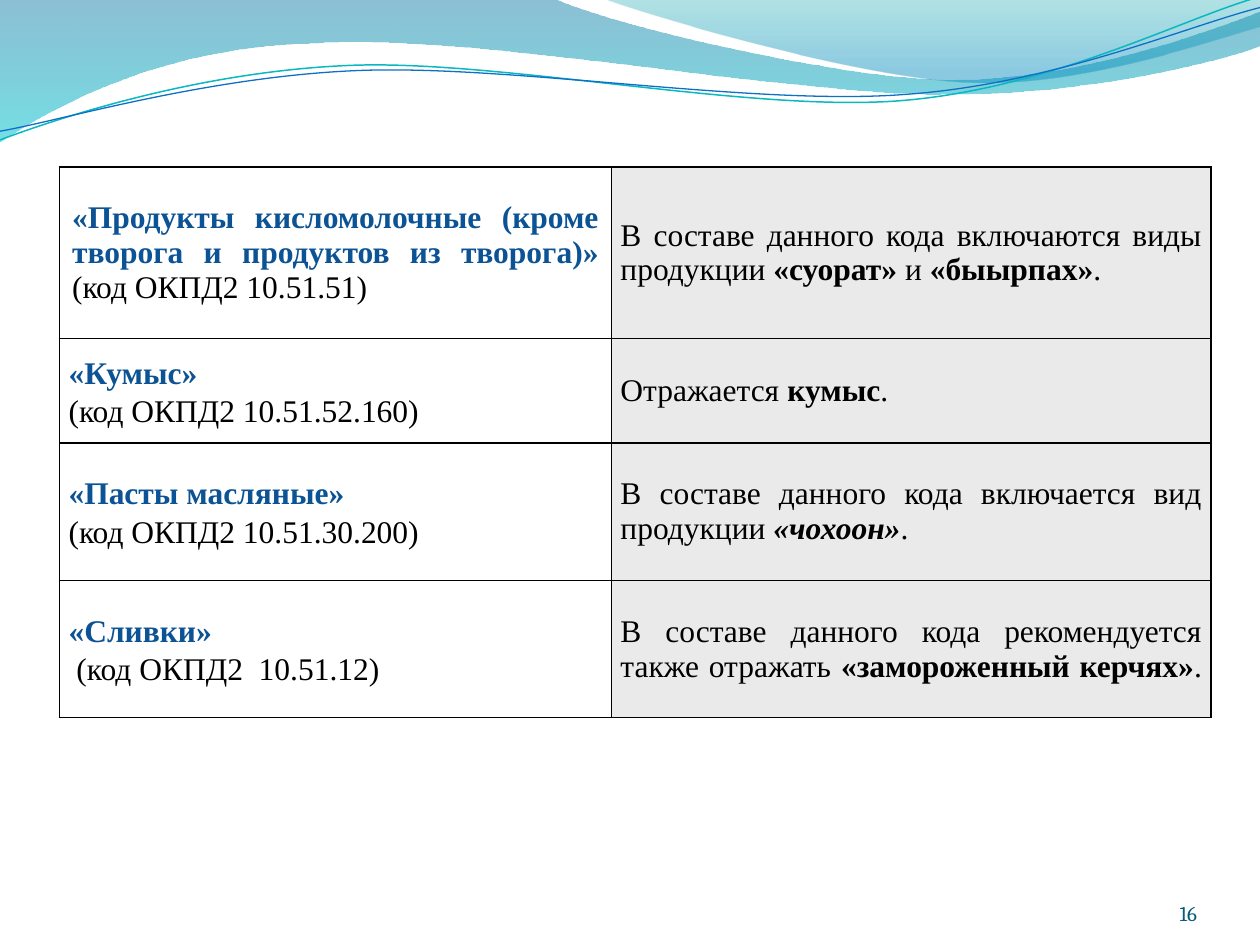
from lxml.etree import SubElement
from pptx import Presentation
from pptx.dml.color import RGBColor
from pptx.enum.text import MSO_ANCHOR, PP_ALIGN
from pptx.oxml.ns import qn
from pptx.util import Pt

COLORS = {
    "black": "000000", "heading": "0B5394", "gray": "EAEAEA", "number": "045D75",
    "deep": "0074A1", "aqua": "00C6CF", "teal": "00A1A9", "sky": "008BBF",
    "teal line": "0AB8BF", "blue line": "0F6FC6",
}


def color(name):
    return RGBColor.from_string(COLORS[name])


def draw_curve(page, start, segments, closed):
    points = [(Pt(segment[i]), Pt(segment[i + 1]))
              for segment in segments for i in range(0, len(segment), 2)]
    builder = page.shapes.build_freeform(Pt(start[0]), Pt(start[1]))
    builder.add_line_segments(points, close=closed)
    shape = builder.convert_to_shape()
    shape.shadow.inherit = False
    lines = iter(shape.element.findall(".//" + qn("a:lnTo")))
    for segment in segments:
        first = next(lines)
        if len(segment) == 6:
            first.tag = qn("a:cubicBezTo")
            for line in (next(lines), next(lines)):
                first.append(line[0])
                line.getparent().remove(line)
    return shape


deck = Presentation()
deck.slide_width, deck.slide_height = Pt(720), Pt(540)
page = deck.slides.add_slide(deck.slide_layouts[6])

waves = [
    ((0, 0),
     [(316.8, -0.7), (342.7, 12.2, 478.1, 45.4, 545.8, 45.4),
      (614.2, 45.4, 689.8, 18.7, 720, 6.5), (720.7, 25.9),
      (707.8, 31.7, 626.4, 54.7, 537.1, 54), (447.8, 54, 275, 20.2, 185, 24.5),
      (92.9, 25.9, 33.1, 59.8, -0.7, 81.4), (0, 0)],
     [(0, "deep", 45), (1, "aqua", 55)]),
    ((344.9, -0.7),
     [(366.5, 7.9, 491, 44.6, 553.7, 46.8), (616.3, 49.7, 691.9, 23, 720, 15.1),
      (720, 0), (344.9, -0.7)],
     [(0, "teal", 30), (0.8, "sky", 45)]),
]
for start, segments, stops in waves:
    wave = draw_curve(page, start, segments, True)
    wave.line.fill.background()
    wave.fill.gradient()
    wave.fill.gradient_angle = 270
    for stop, (position, name, _) in zip(wave.fill.gradient_stops, stops):
        stop.position = position
        stop.color.rgb = color(name)
    shades = wave.element.spPr.findall(".//" + qn("a:srgbClr"))
    for shade, (_, _, opacity) in zip(shades, stops):
        SubElement(shade, qn("a:alpha"), val=str(opacity * 1000))

ribbons = [
    ((-1.4, 63),
     [(33.8, 51.7, 114.1, 29.4, 199.8, 29.9), (284.9, 30.3, 425.8, 67.3, 512.4, 64.9),
      (599, 62.4, 676.5, 25.7, 720.2, 15.5)], "teal line", 0.85),
    ((-1.1, 58),
     [(32.9, 53.8, 118.3, 32.5, 204.1, 33), (290.6, 33.4, 428.9, 63.8, 515.5, 61.4),
      (601.3, 59.6, 678.4, 30.1, 721.4, 21.3)], "blue line", 0.75),
]
for start, segments, name, width in ribbons:
    ribbon = draw_curve(page, start, segments, False)
    ribbon.rotation = 357.3
    ribbon.fill.background()
    ribbon.line.color.rgb = color(name)
    ribbon.line.width = Pt(width)

rows = [
    ([[("«Продукты кисломолочные (кроме творога и продуктов из творога)» ", "heading"),
       ("(код ОКПД2 10.51.51)", "")]],
     [[("В составе данного кода включаются виды продукции ", ""), ("«суорат» ", "bold"),
       ("и", ""), (" «быырпах»", "bold"), (". ", "")]]),
    ([[("«Кумыс» ", "heading")], [("(код ОКПД2 10.51.52.160)", "")]],
     [[("Отражается ", ""), ("кумыс", "bold"), (".", "")]]),
    ([[("«Пасты масляные» ", "heading")], [("(код ОКПД2 10.51.30.200) ", "")]],
     [[("В составе данного кода включается вид продукции ", ""),
       ("«чохоон»", "bold italic"), (".", "")]]),
    ([[("«Сливки»", "heading")], [(" ", "bold"), ("(код ОКПД2  10.51.12)", "")]],
     [[("В составе данного кода рекомендуется также отражать ", ""),
       ("«замороженный керчях»", "bold"), (". ", "")]]),
]
widths = [315.4, 342.7]
heights = [97.9, 59.8, 78.5, 78.5]
table = page.shapes.add_table(len(rows), 2, Pt(34), Pt(95.5),
                              Pt(sum(widths)), Pt(sum(heights))).table
table.first_row = False
table.horz_banding = False
for column, width in zip(table.columns, widths):
    column.width = Pt(width)
for row, height in zip(table.rows, heights):
    row.height = Pt(height)

for row_index, row in enumerate(rows):
    for column_index, paragraphs in enumerate(row):
        cell = table.cell(row_index, column_index)
        cell.vertical_anchor = MSO_ANCHOR.MIDDLE
        if (row_index, column_index) != (0, 0):
            cell.margin_left = cell.margin_right = Pt(5.2)
            cell.margin_top = cell.margin_bottom = Pt(0)
        properties = cell._tc.get_or_add_tcPr()
        for side in ("a:lnL", "a:lnR", "a:lnT", "a:lnB"):
            border = SubElement(properties, qn(side), w=str(Pt(1)))
            paint = SubElement(border, qn("a:solidFill"))
            SubElement(paint, qn("a:srgbClr"), val=COLORS["black"])
        if column_index == 1:
            cell.fill.solid()
            cell.fill.fore_color.rgb = color("gray")
        else:
            cell.fill.background()

        frame = cell.text_frame
        for index, spans in enumerate(paragraphs):
            para = frame.add_paragraph() if index else frame.paragraphs[0]
            para.alignment = PP_ALIGN.JUSTIFY
            if len(paragraphs) > 1:
                para.line_spacing = 1.1
            for text, style in spans:
                span = para.add_run()
                span.text = text
                span.font.name = "Times New Roman"
                span.font.size = Pt(18)
                span.font.bold = style != ""
                span.font.italic = "italic" in style
                span.font.color.rgb = color("heading" if style == "heading" else "black")

number_box = page.shapes.add_textbox(Pt(624.2), Pt(500.4), Pt(59.8), Pt(28.8))
frame = number_box.text_frame
frame.word_wrap = True
frame.vertical_anchor = MSO_ANCHOR.BOTTOM
frame.margin_left = frame.margin_right = frame.margin_top = frame.margin_bottom = Pt(0)
frame.text = "16"
para = frame.paragraphs[0]
para.alignment = PP_ALIGN.RIGHT
span = para.runs[0]
span.font.name = "Cambria"
span.font.size = Pt(12)
span.font.color.rgb = color("number")

deck.save("out.pptx")
